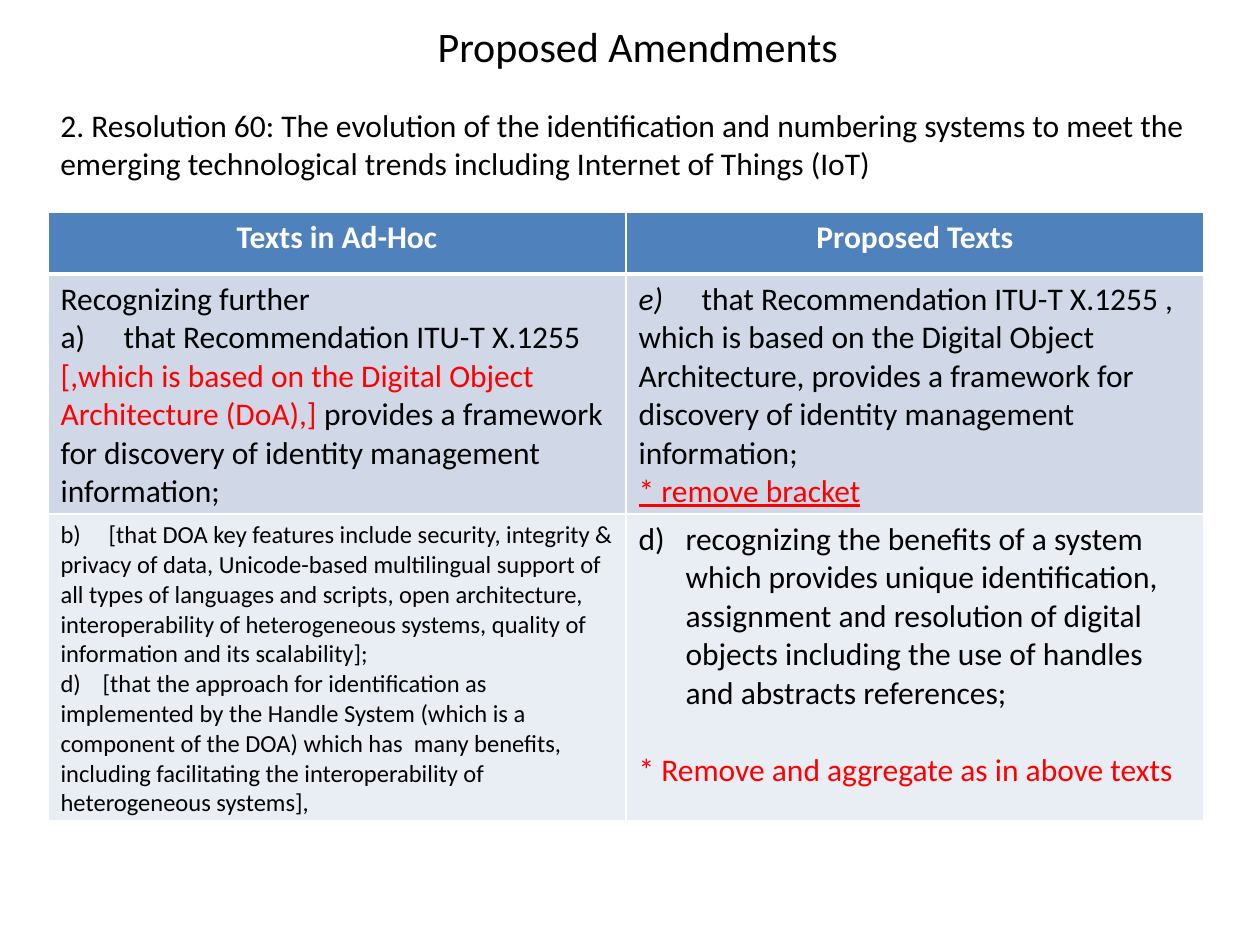
"""Build the proposed amendments slide with its two-column comparison table."""
from dataclasses import dataclass

import pptx
import pptx.dml.color
import pptx.enum.text
import pptx.oxml.ns
import pptx.presentation
import pptx.slide
import pptx.table
import pptx.text.text
import pptx.util
from lxml import etree

EMU_PER_INCH = 914400
PX_PER_INCH = 126


@dataclass(frozen=True)
class Theme:
    font: str = "Calibri"
    black: str = "000000"
    white: str = "FFFFFF"
    red: str = "FF0000"
    header: str = "4F81BD"
    bands: tuple[str, ...] = ("D0D8E8", "E9EDF4")
    title: int = 24
    body: int = 18
    small: int = 14
    thin: int = 1
    thick: int = 3


THEME = Theme()


@dataclass(frozen=True)
class Run:
    text: str
    color: str = THEME.black
    size: int = THEME.body
    bold: bool = False
    italic: bool = False
    underline: bool = False


@dataclass(frozen=True)
class Paragraph:
    runs: tuple[Run, ...]
    align: pptx.enum.text.PP_ALIGN = pptx.enum.text.PP_ALIGN.LEFT
    tab: int = 0
    hanging: int = 0
    number_from: int = 0
    space_before: int = 0


def header(text: str) -> tuple[Paragraph, ...]:
    run = Run(text, THEME.white, bold=True)
    return (Paragraph((run,), pptx.enum.text.PP_ALIGN.CENTER),)


ROW_HEIGHTS = (62, 240, 306)
ROWS = (
    (header("Texts in Ad-Hoc"), header("Proposed Texts")),
    (
        (
            Paragraph((Run("Recognizing further"),)),
            Paragraph((
                Run("a)\tthat Recommendation ITU-T X.1255 "),
                Run("[,which is based on the Digital Object Architecture (DoA),]", THEME.red),
                Run(" provides a framework for discovery of identity management information;"),
            ), tab=63),
        ),
        (
            Paragraph((
                Run("e)", italic=True),
                Run("\tthat Recommendation ITU-T X.1255 , which is based on the Digital Object "
                    "Architecture, provides a framework for discovery of identity management "
                    "information; "),
            ), tab=63),
            Paragraph((Run("* remove bracket", THEME.red, underline=True),)),
        ),
    ),
    (
        (
            Paragraph((Run(
                "b)\t[that DOA key features include security, integrity & privacy of data, "
                "Unicode-based multilingual support of all types of languages and scripts, open "
                "architecture, interoperability of heterogeneous systems, quality of information "
                "and its scalability];", size=THEME.small),), tab=48),
            Paragraph((Run(
                "d)\t[that the approach for identification as implemented by the Handle System "
                "(which is a component of the DOA) which has  many benefits, including "
                "facilitating the interoperability of heterogeneous systems],",
                size=THEME.small),), tab=42),
        ),
        (
            Paragraph((Run(
                "recognizing the benefits of a system which provides unique identification, "
                "assignment and resolution of digital objects including the use of handles and "
                "abstracts references;"),), hanging=47, number_from=4),
            Paragraph((Run("* Remove and aggregate as in above texts", THEME.red),),
                      space_before=22),
        ),
    ),
)


def px(length: int) -> pptx.util.Emu:
    return pptx.util.Emu(round(length * EMU_PER_INCH / PX_PER_INCH))


def add_element(parent: etree._Element, tag: str, **attributes: object) -> etree._Element:
    values = {name: str(value) for name, value in attributes.items()}
    return etree.SubElement(parent, pptx.oxml.ns.qn(tag), values)


def format_paragraph(paragraph: pptx.text.text._Paragraph, content: Paragraph) -> None:
    properties = paragraph._p.get_or_add_pPr()
    if content.number_from:
        properties.set("marL", str(px(content.hanging)))
        properties.set("indent", str(-px(content.hanging)))
        add_element(properties, "a:buFont", typeface="+mj-lt")
        add_element(properties, "a:buAutoNum", type="alphaLcParenR",
                    startAt=content.number_from)
    if content.tab:
        tabs = add_element(properties, "a:tabLst")
        add_element(tabs, "a:tab", pos=px(content.tab), algn="l")
    paragraph.alignment = content.align
    if content.space_before:
        paragraph.space_before = pptx.util.Pt(content.space_before)


def write_text(frame: pptx.text.text.TextFrame, contents: tuple[Paragraph, ...]) -> None:
    for index, content in enumerate(contents):
        paragraph = frame.add_paragraph() if index else frame.paragraphs[0]
        format_paragraph(paragraph, content)
        for item in content.runs:
            run = paragraph.add_run()
            run.text = item.text
            run.font.name = THEME.font
            run.font.size = pptx.util.Pt(item.size)
            run.font.bold = item.bold
            run.font.italic = item.italic
            run.font.underline = item.underline
            run.font.color.rgb = pptx.dml.color.RGBColor.from_string(item.color)


def style_cell(cell: pptx.table._Cell, row: int) -> None:
    properties = cell._tc.get_or_add_tcPr()
    top = THEME.thick if row == 1 else THEME.thin
    bottom = THEME.thick if row == 0 else THEME.thin
    widths = {"L": THEME.thin, "R": THEME.thin, "T": top, "B": bottom}
    for side, width in widths.items():
        line = add_element(properties, f"a:ln{side}", w=pptx.util.Pt(width))
        add_element(add_element(line, "a:solidFill"), "a:srgbClr", val=THEME.white)
    color = THEME.bands[row - 1] if row else THEME.header
    cell.fill.solid()
    cell.fill.fore_color.rgb = pptx.dml.color.RGBColor.from_string(color)


def add_heading(slide: pptx.slide.Slide) -> None:
    title = slide.shapes.title
    title.left, title.top, title.width, title.height = px(425), px(14), px(430), px(63)
    frame = title.text_frame
    frame.word_wrap = False
    frame.auto_size = pptx.enum.text.MSO_AUTO_SIZE.SHAPE_TO_FIT_TEXT
    frame.vertical_anchor = pptx.enum.text.MSO_ANCHOR.TOP
    write_text(frame, (Paragraph((Run("Proposed Amendments", size=THEME.title),)),))

    resolution = slide.shapes.add_textbox(px(48), px(100), px(1183), px(89))
    resolution.text_frame.word_wrap = True
    write_text(resolution.text_frame, (Paragraph((Run(
        "2. Resolution 60: The evolution of the identification and numbering systems to meet "
        "the emerging technological trends including Internet of Things (IoT)"),)),))


def add_comparison(slide: pptx.slide.Slide) -> None:
    frame = slide.shapes.add_table(len(ROWS), len(ROWS[0]), px(48), px(212),
                                   px(1156), px(sum(ROW_HEIGHTS)))
    table = frame.table
    for row, (height, contents) in enumerate(zip(ROW_HEIGHTS, ROWS)):
        table.rows[row].height = px(height)
        for column, content in enumerate(contents):
            cell = table.cell(row, column)
            style_cell(cell, row)
            write_text(cell.text_frame, content)


def main() -> None:
    presentation = pptx.Presentation()
    presentation.slide_width = px(1260)
    presentation.slide_height = px(945)
    slide = presentation.slides.add_slide(presentation.slide_layouts[5])
    add_heading(slide)
    add_comparison(slide)
    presentation.save("out.pptx")


if __name__ == "__main__":
    main()
